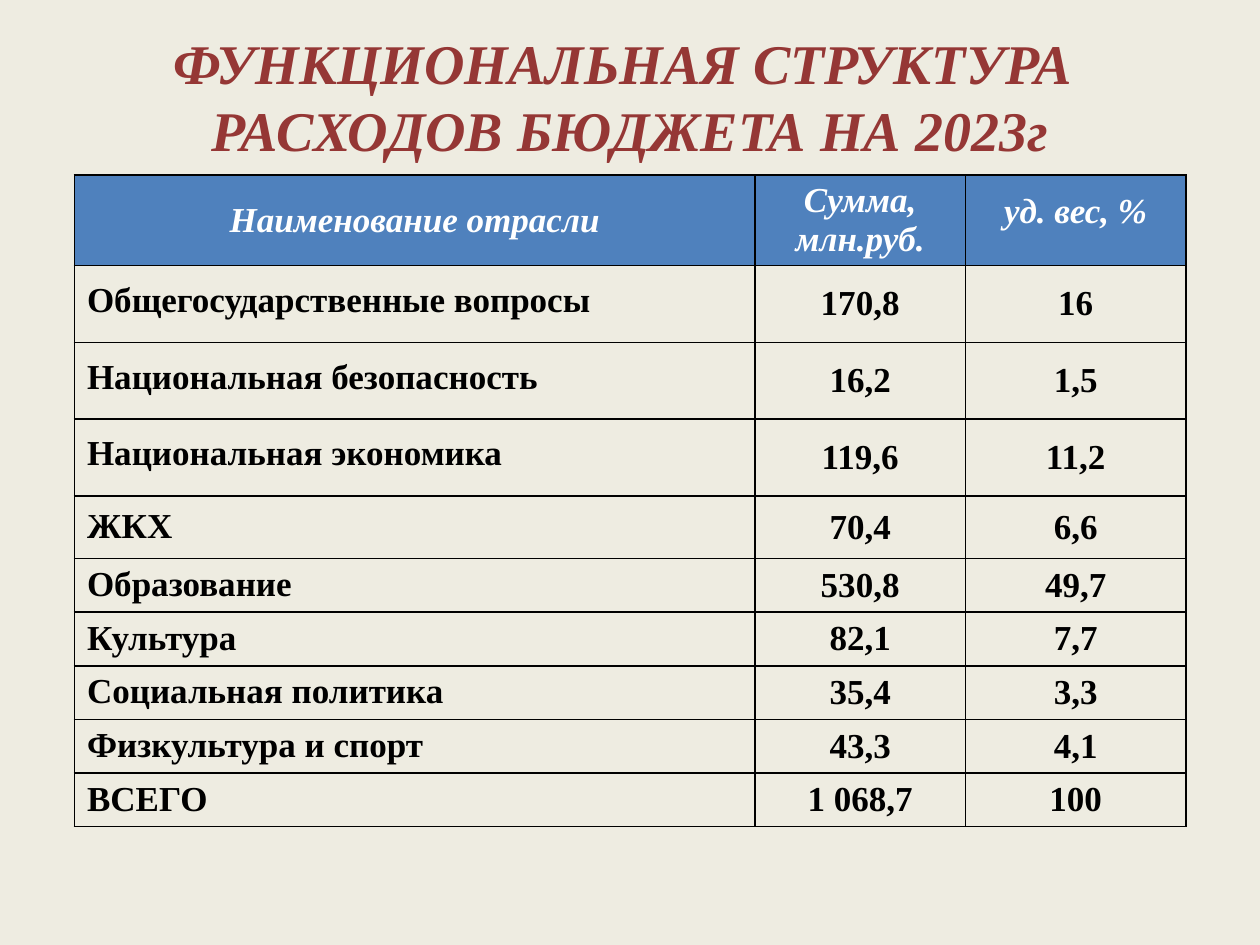
from lxml.etree import SubElement
from pptx import Presentation
from pptx.dml.color import RGBColor
from pptx.enum.text import MSO_ANCHOR as ANCHOR, MSO_AUTO_SIZE as AUTO, PP_ALIGN as ALIGN
from pptx.oxml.ns import qn
from pptx.util import Cm, Pt

FONT = "Times New Roman"
BG, TITLE, HEAD, WHITE, BLACK = "EEECE1", "953735", "4F81BD", "FFFFFF", "000000"

HEADERS = ["Наименование отрасли", "Сумма, млн.руб.", "уд. вес, %"]
# Name, amount, share, row height in cm, line spacing of the name in points
ROWS = [
    ("Общегосударственные вопросы", "170,8", "16", 1.55, 18),
    ("Национальная безопасность", "16,2", "1,5", 1.55, 18),
    ("Национальная экономика", "119,6", "11,2", 1.55, 18),
    ("ЖКХ", "70,4", "6,6", 1.26, 21.6),
    ("Образование", "530,8", "49,7", 1.08, 21.6),
    ("Культура", "82,1", "7,7", 1.08, 21.6),
    ("Социальная политика", "35,4", "3,3", 1.08, 21.6),
    ("Физкультура и спорт", "43,3", "4,1", 1.08, 21.6),
    ("ВСЕГО", "1 068,7", "100", 1.08, 21.6),
]
COL_WIDTHS = [13.72, 4.24, 4.45]
HEAD_HEIGHT = 1.8


def rgb(color):
    return RGBColor.from_string(color)


def write(tf, text, size, color, align, italic=False, spacing=None):
    p = tf.paragraphs[0]
    p.text = text
    p.alignment = align
    if spacing:
        p.line_spacing = Pt(spacing)
    fmt = {"name": FONT, "size": Pt(size), "bold": True, "italic": italic}
    for r in p.runs:
        for key, value in fmt.items():
            setattr(r.font, key, value)
        r.font.color.rgb = rgb(color)


def add_borders(cell):
    tcPr = cell._tc.get_or_add_tcPr()
    for side in ("a:lnL", "a:lnR", "a:lnT", "a:lnB"):
        ln = SubElement(tcPr, qn(side), w=str(Pt(1)))
        fill = SubElement(ln, qn("a:solidFill"))
        SubElement(fill, qn("a:srgbClr"), val=BLACK)


def fill_cell(cell, text, color, align, fill=None, **style):
    add_borders(cell)
    if fill:
        cell.fill.solid()
        cell.fill.fore_color.rgb = rgb(fill)
    else:
        cell.fill.background()
    cell.vertical_anchor = ANCHOR.MIDDLE
    write(cell.text_frame, text, 20, color, align, **style)


def place_title(s, left, top, width, height):
    sp = s.shapes.title
    box = {"left": left, "top": top, "width": width, "height": height}
    for key, value in box.items():
        setattr(sp, key, Cm(value))
    tf = sp.text_frame
    tf.word_wrap = True
    tf.auto_size = AUTO.NONE
    tf.vertical_anchor = ANCHOR.MIDDLE
    write(tf, "ФУНКЦИОНАЛЬНАЯ СТРУКТУРА \vРАСХОДОВ БЮДЖЕТА НА 2023г",
          32, TITLE, ALIGN.CENTER, italic=True)


def place_budget_table(s, left, top):
    heights = [HEAD_HEIGHT] + [row[3] for row in ROWS]
    table = s.shapes.add_table(len(heights), len(COL_WIDTHS), Cm(left), Cm(top),
                               Cm(sum(COL_WIDTHS)), Cm(sum(heights))).table
    for col, width in zip(table.columns, COL_WIDTHS):
        col.width = Cm(width)
    for row, height in zip(table.rows, heights):
        row.height = Cm(height)

    # Header row
    for c, text in enumerate(HEADERS):
        fill_cell(table.cell(0, c), text, WHITE, ALIGN.CENTER, fill=HEAD,
                  italic=True, spacing=12 if c == 2 else None)

    # Budget lines
    for i, (name, amount, share, _, spacing) in enumerate(ROWS, 1):
        fill_cell(table.cell(i, 0), name, BLACK, ALIGN.LEFT, spacing=spacing)
        for c, value in enumerate((amount, share), 1):
            fill_cell(table.cell(i, c), value, BLACK, ALIGN.CENTER)


def main():
    prs = Presentation()
    prs.slide_width, prs.slide_height = Cm(25.4), Cm(19.05)
    s = prs.slides.add_slide(prs.slide_layouts[5])
    s.background.fill.solid()
    s.background.fill.fore_color.rgb = rgb(BG)
    place_title(s, 0, 0.74, 25.4, 2.39)
    place_budget_table(s, 1.5, 3.53)
    prs.save("out.pptx")


if __name__ == "__main__":
    main()
